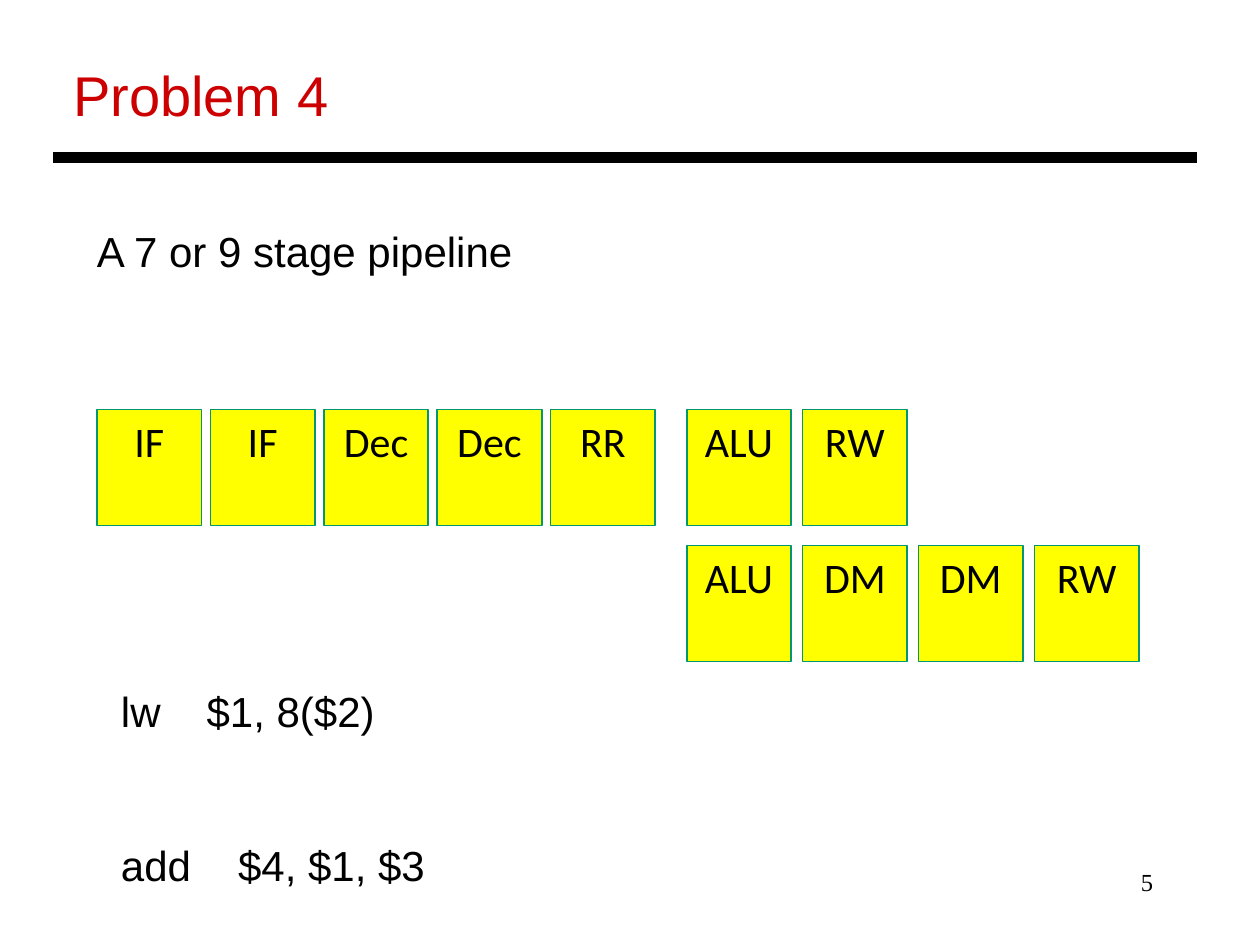
from lxml import etree
from pptx import Presentation
from pptx.dml.color import RGBColor
from pptx.enum.shapes import MSO_CONNECTOR, MSO_SHAPE
from pptx.enum.text import MSO_ANCHOR, MSO_AUTO_SIZE, PP_ALIGN
from pptx.oxml.ns import qn
from pptx.util import Inches, Pt

LEFT, CENTER, RIGHT = PP_ALIGN.LEFT, PP_ALIGN.CENTER, PP_ALIGN.RIGHT
TOP = MSO_ANCHOR.TOP
NO_AUTOFIT = MSO_AUTO_SIZE.NONE
RECT = MSO_SHAPE.RECTANGLE
STRAIGHT = MSO_CONNECTOR.STRAIGHT

COLORS = {"title": "CC0000", "text": "000000", "rule": "000000",
          "stage": "FFFF00", "edge": "009771"}
STAGE_W, STAGE_H = 0.83, 0.92


def rgb(name):
    return RGBColor.from_string(COLORS[name])


def place(sp, box):
    sp.left, sp.top, sp.width, sp.height = (Inches(v) for v in box)


def set_frame(sp, wrap=False):
    tf = sp.text_frame
    tf.word_wrap = wrap
    tf.auto_size = NO_AUTOFIT
    tf.vertical_anchor = TOP
    return tf


def add_text(p, text, size=24, font="Arial", color="text", align=LEFT):
    p.alignment = align
    r = p.add_run()
    r.text = text
    r.font.size = Pt(size)
    r.font.name = font
    r.font.color.rgb = rgb(color)


def add_title(s, box, text):
    sp = s.shapes.title
    place(sp, box)
    add_text(set_frame(sp).paragraphs[0], text, 32, color="title")


def add_rule(s, left, right, y):
    line = s.shapes.add_connector(STRAIGHT, Inches(left), Inches(y), Inches(right), Inches(y))
    line.line.color.rgb = rgb("rule")
    line.line.width = Pt(6)
    etree.SubElement(line._element.spPr, qn("a:effectLst"))


def add_label(s, box, text, **style):
    sp = s.shapes.add_textbox(*(Inches(v) for v in box))
    add_text(set_frame(sp, True).paragraphs[0], text, **style)


def add_stages(s, left, top, pitch, names):
    for i, name in enumerate(names):
        sp = s.shapes.add_shape(RECT, Inches(left + i * pitch), Inches(top),
                                Inches(STAGE_W), Inches(STAGE_H))
        sp.shadow.inherit = False
        sp.fill.solid()
        sp.fill.fore_color.rgb = rgb("stage")
        sp.line.color.rgb = rgb("edge")
        sp.line.width = Pt(1)
        add_text(set_frame(sp, True).paragraphs[0], name, font="Calibri", align=CENTER)


def add_code(s, box, instructions):
    sp = s.shapes.add_textbox(*(Inches(v) for v in box))
    tf = set_frame(sp)
    tf.margin_left = Inches(0.19)
    for i, (opcode, operands, tab) in enumerate(instructions):
        p = tf.add_paragraph() if i else tf.paragraphs[0]
        add_text(p, f"{opcode}\t{operands}")
        if i:
            p.space_before = Pt(59)
        tabs = etree.SubElement(p._p.get_or_add_pPr(), qn("a:tabLst"))
        etree.SubElement(tabs, qn("a:tab"), pos=str(Inches(tab)), algn="l")


def main():
    prs = Presentation()
    prs.slide_width, prs.slide_height = Inches(10), Inches(7.5)
    s = prs.slides.add_slide(prs.slide_layouts[5])
    add_title(s, (0.48, 0.43, 2.24, 0.64), "Problem 4")
    add_rule(s, 0.42, 9.5, 1.25)
    add_label(s, (0.67, 1.74, 3.53, 0.51), "A 7 or 9 stage pipeline")
    add_stages(s, 0.77, 3.25, 0.9, ("IF", "IF", "Dec", "Dec", "RR"))
    add_stages(s, 5.45, 3.25, 0.92, ("ALU", "RW"))
    add_stages(s, 5.45, 4.33, 0.92, ("ALU", "DM", "DM", "RW"))
    add_code(s, (0.77, 5.39, 2.73, 1.72),
             (("lw", "$1, 8($2)", 0.68), ("add", "$4, $1, $3", 0.93)))
    add_label(s, (7.17, 6.83, 2.08, 0.5), "5", size=14,
              font="Times New Roman", align=RIGHT)
    prs.save("out.pptx")


if __name__ == "__main__":
    main()
